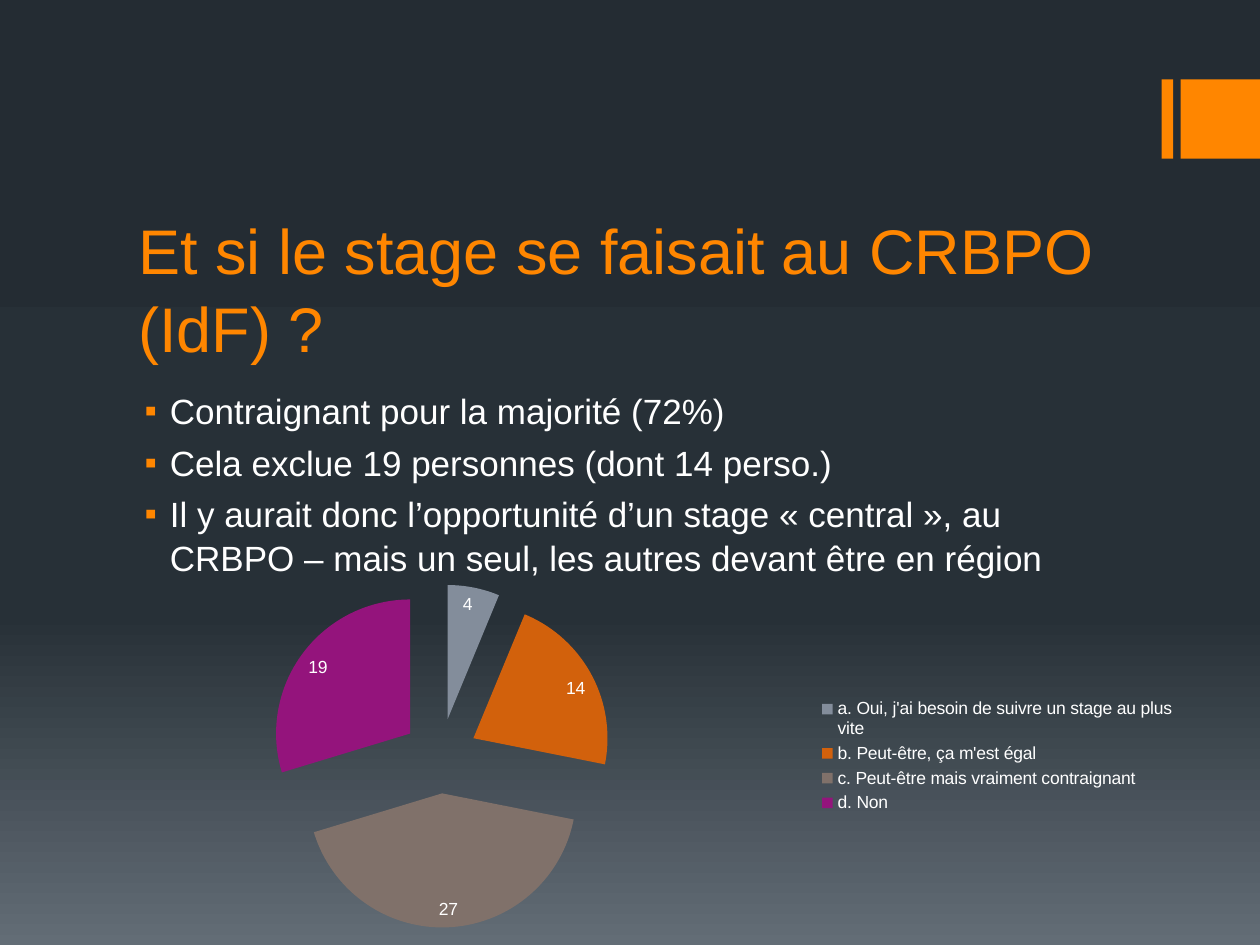
from copy import deepcopy

from lxml.etree import SubElement
from pptx import Presentation
from pptx.chart.data import CategoryChartData
from pptx.dml.color import RGBColor
from pptx.enum.chart import XL_CHART_TYPE, XL_LABEL_POSITION, XL_LEGEND_POSITION
from pptx.enum.shapes import MSO_SHAPE
from pptx.enum.text import MSO_ANCHOR
from pptx.oxml.ns import qn
from pptx.util import Inches, Pt

COLORS = {
    "accent": "FF8600",
    "text": "FFFFFF",
    "background_top": "242C33",
    "background_middle": "273037",
    "background_bottom": "636D76",
}
FONT = "Arial"
TITLE = "Et si le stage se faisait au CRBPO (IdF) ?"
POINTS = [
    "Contraignant pour la majorité (72%)",
    "Cela exclue 19 personnes (dont 14 perso.)",
    "Il y aurait donc l’opportunité d’un stage « central », au CRBPO – mais un seul, "
    "les autres devant être en région",
]
ANSWERS = [
    ("a. Oui, j'ai besoin de suivre un stage au plus vite", 4, "838D9B"),
    ("b. Peut-être, ça m'est égal", 14, "D2610C"),
    ("c. Peut-être mais vraiment contraignant", 27, "80716A"),
    ("d. Non", 19, "94147C"),
]


def color(name):
    """Return the named palette colour."""
    return RGBColor.from_string(COLORS[name])


def format_font(font, size, color_name):
    """Apply the typeface, size and colour to a font."""
    font.name = FONT
    font.size = Pt(size)
    font.color.rgb = color(color_name)


def paint_background(slide):
    """Fill the slide with a vertical three-stop gradient."""
    fill = slide.background.fill
    fill.gradient()
    fill.gradient_angle = 270
    stop_list = slide.element.find(".//" + qn("a:gsLst"))
    stop_list.append(deepcopy(stop_list[-1]))
    stops = [("background_top", 0), ("background_middle", 0.65), ("background_bottom", 1)]
    for stop, (name, position) in zip(fill.gradient_stops, stops):
        stop.color.rgb = color(name)
        stop.position = position


def add_corner_mark(slide, left, top, width, height):
    """Add a thin bar and a square, aligned to the right end of the box."""
    bar_width = Inches(0.09)
    for x, part_width in [(left, bar_width), (left + width - height, height)]:
        shape = slide.shapes.add_shape(MSO_SHAPE.RECTANGLE, x, top, part_width, height)
        shape.shadow.inherit = False
        shape.fill.solid()
        shape.fill.fore_color.rgb = color("accent")
        shape.line.fill.background()


def add_text(slide, box, lines, size, color_name):
    """Add a wrapped text box with one paragraph per line of text."""
    text_frame = slide.shapes.add_textbox(*box).text_frame
    text_frame.word_wrap = True
    text_frame.text = "\n".join(lines)
    for paragraph in text_frame.paragraphs:
        paragraph.line_spacing = 1.04
        format_font(paragraph.runs[0].font, size, color_name)
    return text_frame


def add_title(slide, left, top, width, height):
    """Add the title, resting on the bottom of its box."""
    text_frame = add_text(slide, (left, top, width, height), [TITLE], 36, "accent")
    text_frame.vertical_anchor = MSO_ANCHOR.BOTTOM


def add_bullets(slide, left, top, width, height):
    """Add the list with square accent bullets."""
    text_frame = add_text(slide, (left, top, width, height), POINTS, 20, "text")
    for paragraph in text_frame.paragraphs:
        paragraph.space_before = Pt(4.5)
        properties = paragraph._p.get_or_add_pPr()
        properties.set("marL", str(Inches(0.25)))
        properties.set("indent", str(Inches(-0.2)))
        bullet_color = SubElement(properties, qn("a:buClr"))
        SubElement(bullet_color, qn("a:srgbClr"), val=COLORS["accent"])
        SubElement(properties, qn("a:buFont"), typeface=FONT)
        SubElement(properties, qn("a:buChar"), char="▪")


def add_answer_chart(slide, left, top, width, height):
    """Add the exploded pie of answers with its legend on the right."""
    names, values, slice_colors = zip(*ANSWERS)
    chart_data = CategoryChartData()
    chart_data.categories = names
    chart_data.add_series("Series 1", values)
    chart = slide.shapes.add_chart(
        XL_CHART_TYPE.PIE_EXPLODED, left, top, width, height, chart_data
    ).chart
    format_font(chart.font, 10, "text")
    chart.has_title = False
    chart.has_legend = True
    chart.legend.position = XL_LEGEND_POSITION.RIGHT
    chart.legend.include_in_layout = False

    plot = chart.plots[0]
    plot.vary_by_categories = True
    series = plot.series[0]
    for index, slice_color in enumerate(slice_colors):
        fill = series.points[index].format.fill
        fill.solid()
        fill.fore_color.rgb = RGBColor.from_string(slice_color)
    series._element.find(qn("c:explosion")).set("val", "28")

    plot.has_data_labels = True
    labels = plot.data_labels
    labels.show_value = True
    labels.show_percentage = False
    labels.position = XL_LABEL_POSITION.INSIDE_END
    format_font(labels.font, 10, "text")


def main():
    """Build and save the presentation."""
    presentation = Presentation()
    presentation.slide_width = Inches(10)
    presentation.slide_height = Inches(7.5)
    slide = presentation.slides.add_slide(presentation.slide_layouts[6])
    paint_background(slide)
    add_corner_mark(slide, Inches(9.22), Inches(0.63), Inches(0.78), Inches(0.63))
    add_title(slide, Inches(1), Inches(1.69), Inches(8), Inches(1.26))
    add_bullets(slide, Inches(1), Inches(3.03), Inches(8), Inches(3.87))
    add_answer_chart(slide, Inches(0.51), Inches(4.5), Inches(8.92), Inches(3))
    presentation.save("out.pptx")


if __name__ == "__main__":
    main()
